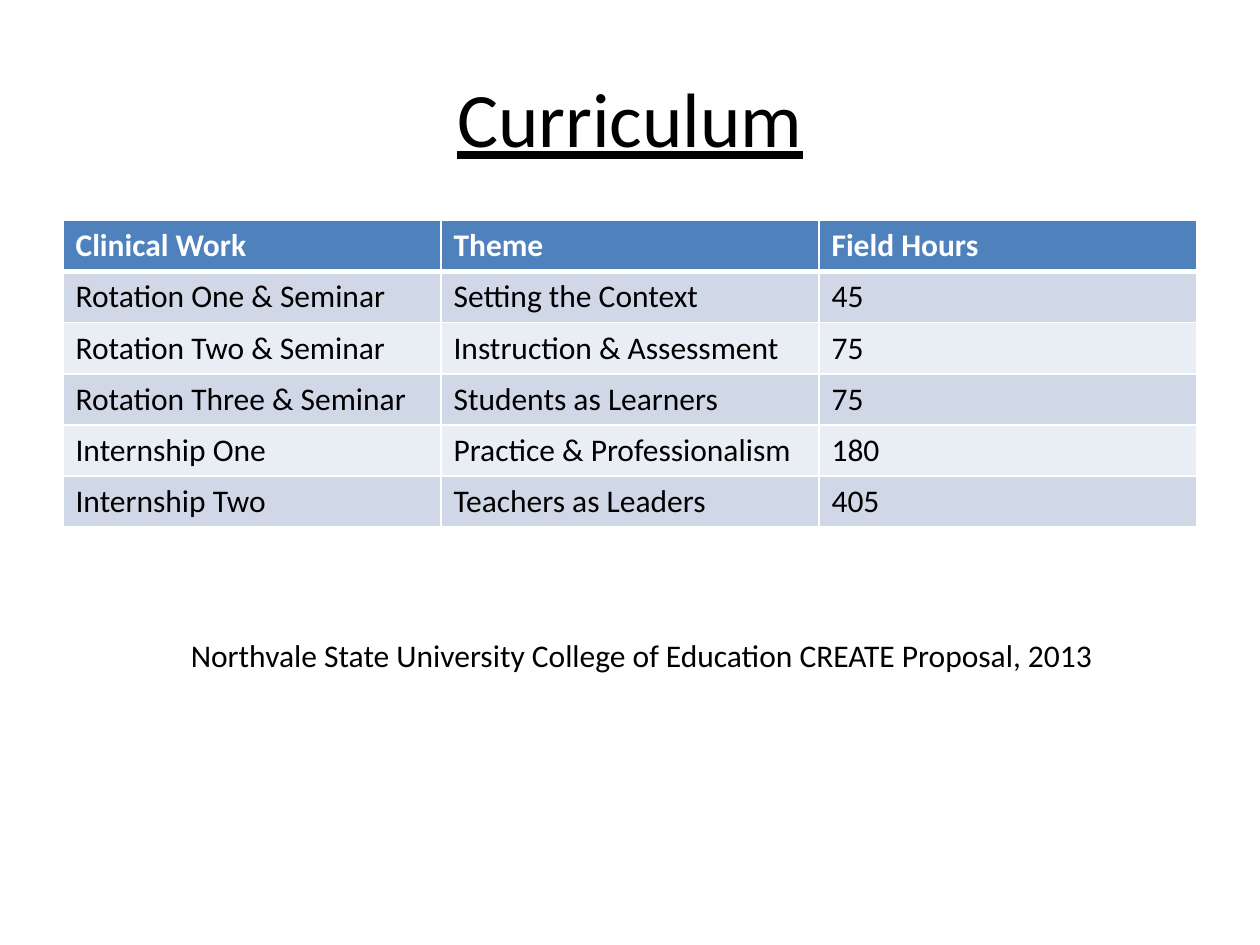
import pptx
import pptx.dml.color
import pptx.enum.text
import pptx.oxml
import pptx.oxml.ns
import pptx.util

Pt = pptx.util.Pt
RGBColor = pptx.dml.color.RGBColor
PP_ALIGN = pptx.enum.text.PP_ALIGN
MSO_ANCHOR = pptx.enum.text.MSO_ANCHOR

BLACK = RGBColor(0x00, 0x00, 0x00)
WHITE = RGBColor(0xFF, 0xFF, 0xFF)
HEADER_BLUE = RGBColor(0x4F, 0x81, 0xBD)
BAND_DARK = RGBColor(0xD0, 0xD8, 0xE8)
BAND_LIGHT = RGBColor(0xE9, 0xED, 0xF4)


def write_text(tf, text, size=18, color=BLACK, bold=False, underline=False,
               align=PP_ALIGN.LEFT):
    p = tf.paragraphs[0]
    p.alignment = align
    r = p.add_run()
    r.text = text
    r.font.name = "Calibri"
    r.font.size = Pt(size)
    r.font.color.rgb = color
    r.font.bold = bold
    r.font.underline = underline


def add_border(cell, side, width):
    cell._tc.get_or_add_tcPr().append(pptx.oxml.parse_xml(
        f'<a:{side} {pptx.oxml.ns.nsdecls("a")} w="{Pt(width)}">'
        f'<a:solidFill><a:srgbClr val="{WHITE}"/></a:solidFill></a:{side}>'))


prs = pptx.Presentation()
prs.slide_width, prs.slide_height = Pt(720), Pt(540)
s = prs.slides.add_slide(prs.slide_layouts[6])

# Title
tf = s.shapes.add_textbox(Pt(36), Pt(21.6), Pt(648), Pt(90)).text_frame
tf.word_wrap = True
tf.vertical_anchor = MSO_ANCHOR.MIDDLE
write_text(tf, "Curriculum", size=44, underline=True, align=PP_ALIGN.CENTER)

# Curriculum table
rows = [
    ("Clinical Work", "Theme", "Field Hours"),
    ("Rotation One & Seminar", "Setting the Context", "45"),
    ("Rotation Two & Seminar", "Instruction & Assessment", "75"),
    ("Rotation Three & Seminar", "Students as Learners", "75"),
    ("Internship One", "Practice & Professionalism", "180"),
    ("Internship Two", "Teachers as Leaders", "405"),
]
row_height = 29.2
table = s.shapes.add_table(len(rows), 3, Pt(36), Pt(126), Pt(648),
                           Pt(row_height * len(rows))).table
for i, row in enumerate(rows):
    table.rows[i].height = Pt(row_height)
    header = i == 0
    fill = HEADER_BLUE if header else BAND_DARK if i % 2 else BAND_LIGHT
    # A thick rule separates the header from the body
    widths = {"lnL": 1, "lnR": 1, "lnT": 3 if i == 1 else 1,
              "lnB": 3 if header else 1}
    for j, text in enumerate(row):
        cell = table.cell(i, j)
        for side, width in widths.items():
            add_border(cell, side, width)
        cell.fill.solid()
        cell.fill.fore_color.rgb = fill
        write_text(cell.text_frame, text, color=WHITE if header else BLACK,
                   bold=header)

# Source line
tf = s.shapes.add_textbox(Pt(102), Pt(360), Pt(535), Pt(29)).text_frame
tf.word_wrap = False
tf.auto_size = pptx.enum.text.MSO_AUTO_SIZE.SHAPE_TO_FIT_TEXT
write_text(tf, "Northvale State University College of Education CREATE Proposal, 2013")

prs.save("out.pptx")
